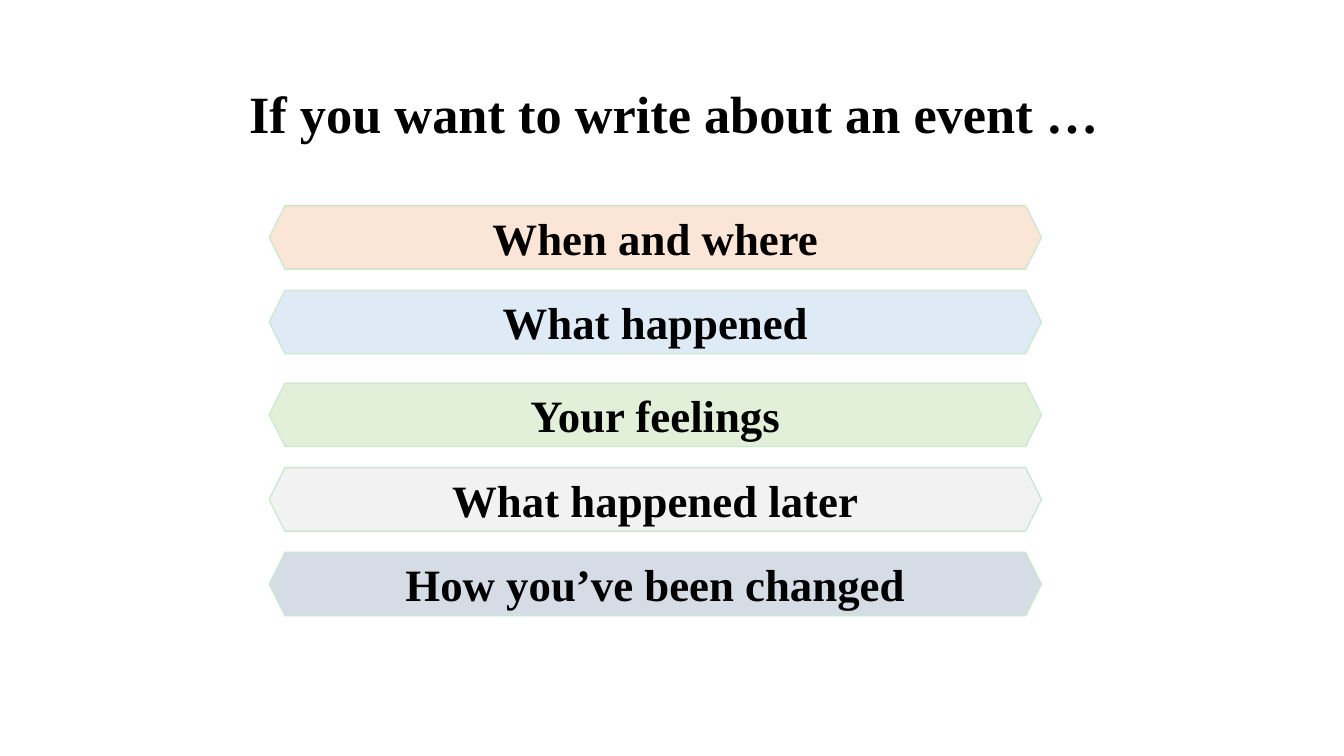
from pptx import Presentation
from pptx import util as u
from pptx.dml import color
from pptx.enum import shapes, text

FACE = "Times New Roman"
STEPS = [
    ("When and where", "FBE5D6"),
    ("What happened", "DEEBF7"),
    ("Your feelings", "E2F0D9"),
    ("What happened later", "F2F2F2"),
    ("How you’ve been changed", "D6DCE5"),
]


def paint(target, code):
    target.rgb = color.RGBColor.from_string(code)


def write(shape, words, size, align):
    frame = shape.text_frame
    frame.text = words
    frame.word_wrap = True
    frame.auto_size = text.MSO_AUTO_SIZE.NONE
    frame.vertical_anchor = text.MSO_ANCHOR.MIDDLE
    para = frame.paragraphs[0]
    para.alignment = align
    para.line_spacing = 1.0
    para.space_before = u.Pt(0)
    font = para.runs[0].font
    font.name, font.size, font.bold = FACE, u.Pt(size), True
    paint(font.color, "000000")


def add_title(slide, left, top, width, height):
    title = slide.shapes.title
    title.left, title.top = u.Inches(left), u.Inches(top)
    title.width, title.height = u.Inches(width), u.Inches(height)
    write(title, "If you want to write about an event …", 37.4,
          text.PP_ALIGN.LEFT)


def add_steps(slide, left, top, width, height, pitch=0.84, gap=0.08):
    for i, (words, fill) in enumerate(STEPS):
        # The first two steps stand slightly apart from the rest
        y = top + i * pitch + (gap if i > 1 else 0)
        bar = slide.shapes.add_shape(
            shapes.MSO_SHAPE.HEXAGON, u.Inches(left), u.Inches(y),
            u.Inches(width), u.Inches(height))
        bar.shadow.inherit = False
        bar.fill.solid()
        paint(bar.fill.fore_color, fill)
        paint(bar.line.color, "CCE8CF")
        bar.line.width = u.Pt(1)
        write(bar, words, 32, text.PP_ALIGN.CENTER)


def main():
    deck = Presentation()
    deck.slide_width, deck.slide_height = u.Inches(13.33), u.Inches(7.5)
    slide = deck.slides.add_slide(deck.slide_layouts[5])
    # Heading
    add_title(slide, 2.37, 0.75, 9.31, 0.73)
    # Stack of steps
    add_steps(slide, 2.67, 2.04, 7.66, 0.63)
    deck.save("out.pptx")


if __name__ == "__main__":
    main()
